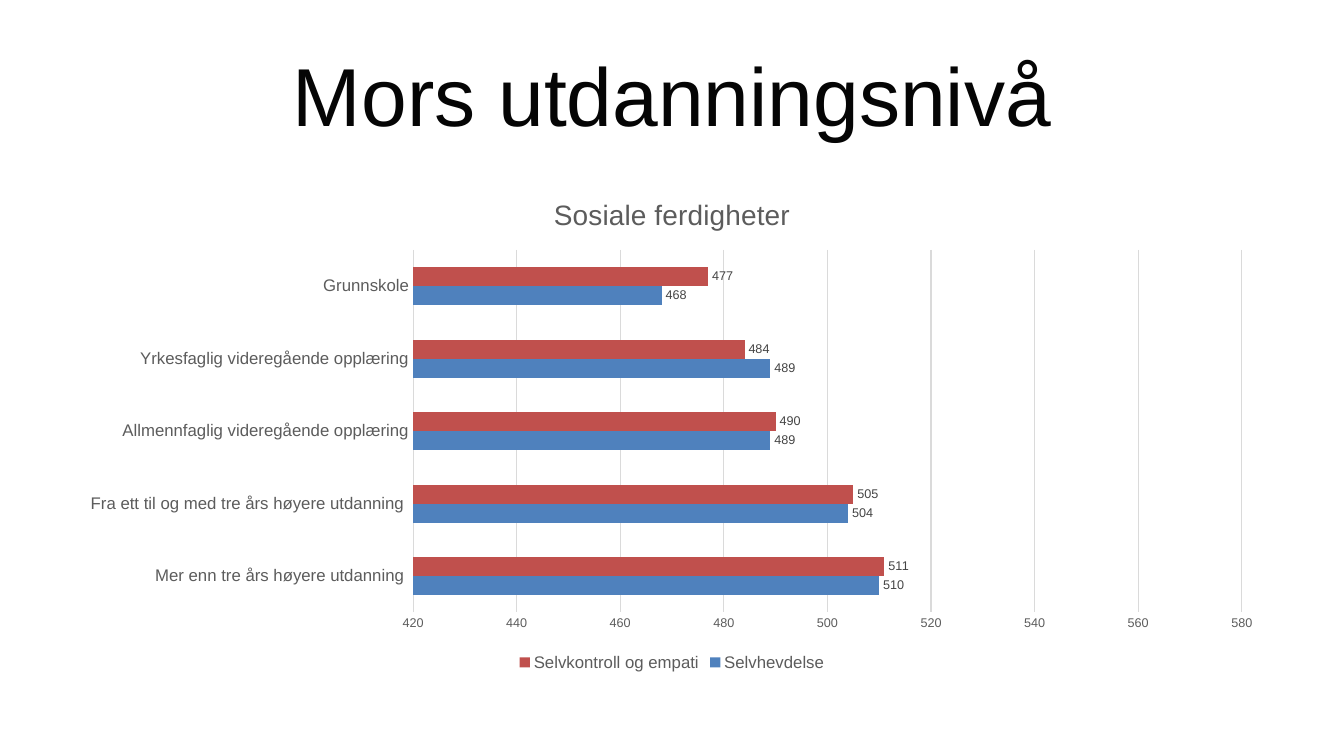
"""Builds a slide with a bar chart of social skills by mother's education."""
from lxml import etree
from pptx import Presentation
from pptx import util as u
from pptx.chart import data as chart_data
from pptx.dml import color
from pptx.enum import chart as ch, text
from pptx.oxml import ns

HEADING = "Mors utdanningsnivå"
CHART_TITLE = "Sosiale ferdigheter"
LEVELS = [
    "Mer enn tre års høyere utdanning ",
    "Fra ett til og med tre års høyere utdanning ",
    "Allmennfaglig videregående opplæring",
    "Yrkesfaglig videregående opplæring",
    "Grunnskole",
]
SERIES = [
    ("Selvhevdelse", "4F81BD", (510, 504, 489, 489, 468)),
    ("Selvkontroll og empati", "C0504D", (511, 505, 490, 484, 477)),
]
PLOT_AREA = {"x": 0.286, "y": 0.147, "w": 0.685, "h": 0.727}
FONT, BLACK, GREY, DARK, PALE = "Arial", "050505", "5C5C5C", "444444", "DADADA"
WIDTH, HEIGHT, MARGIN = 33.87, 19.05, 1.69


def paint(target, value):
    target.rgb = color.RGBColor.from_string(value)


def style(font, size, value):
    font.name, font.size, font.bold = FONT, u.Pt(size), False
    paint(font.color, value)


def write(frame, words, *, size, value):
    para = frame.paragraphs[0]
    para.alignment = text.PP_ALIGN.CENTER
    span = para.add_run()
    span.text = words
    style(span.font, size, value)


def rule(line):
    line.width = u.Pt(0.75)
    paint(line.color, PALE)


def place_plot(chart):
    plot_area = chart.plots[0]._element.getparent()
    for old in plot_area.findall(ns.qn("c:layout")):
        plot_area.remove(old)
    layout = etree.Element(ns.qn("c:layout"))
    manual = etree.SubElement(layout, ns.qn("c:manualLayout"))
    settings = [("layoutTarget", "inner"), ("xMode", "edge"), ("yMode", "edge")]
    for name, value in settings + list(PLOT_AREA.items()):
        etree.SubElement(manual, ns.qn("c:" + name)).set("val", str(value))
    plot_area.insert(0, layout)


def add_bars(page):
    data = chart_data.CategoryChartData(number_format="0")
    data.categories = LEVELS
    for name, _, values in SERIES:
        data.add_series(name, values)
    chart = page.shapes.add_chart(
        ch.XL_CHART_TYPE.BAR_CLUSTERED, u.Cm(MARGIN), u.Cm(4.45),
        u.Cm(WIDTH - 2 * MARGIN), u.Cm(12.57), data).chart
    style(chart.font, 10, BLACK)
    chart.has_title = True
    write(chart.chart_title.text_frame, CHART_TITLE, size=20, value=GREY)
    chart.chart_title.include_in_layout = False
    chart.has_legend = True
    chart.legend.position = ch.XL_LEGEND_POSITION.BOTTOM
    chart.legend.include_in_layout = False
    style(chart.legend.font, 12, GREY)

    for axis, size in ((chart.category_axis, 12), (chart.value_axis, 9)):
        axis.major_tick_mark = axis.minor_tick_mark = ch.XL_TICK_MARK.NONE
        style(axis.tick_labels.font, size, GREY)
    rule(chart.category_axis.format.line)
    scale = chart.value_axis
    scale.minimum_scale, scale.maximum_scale, scale.major_unit = 420, 580, 20
    scale.format.line.fill.background()
    rule(scale.major_gridlines.format.line)

    bars = chart.plots[0]
    bars.gap_width, bars.overlap, bars.vary_by_categories = 182, 0, False
    for series, (_, fill, _) in zip(bars.series, SERIES):
        series.format.fill.solid()
        paint(series.format.fill.fore_color, fill)
        labels = series.data_labels
        labels.show_value = True
        labels.number_format, labels.number_format_is_linked = "0", False
        labels.position = ch.XL_LABEL_POSITION.OUTSIDE_END
        style(labels.font, 9, DARK)
    place_plot(chart)


def main():
    deck = Presentation()
    deck.slide_width, deck.slide_height = u.Cm(WIDTH), u.Cm(HEIGHT)
    page = deck.slides.add_slide(deck.slide_layouts[6])
    box = page.shapes.add_textbox(
        u.Cm(MARGIN), u.Cm(0.76), u.Cm(WIDTH - 2 * MARGIN), u.Cm(3.18))
    box.text_frame.word_wrap = True
    box.text_frame.vertical_anchor = text.MSO_ANCHOR.MIDDLE
    write(box.text_frame, HEADING, size=58.7, value=BLACK)
    add_bars(page)
    deck.save("out.pptx")


if __name__ == "__main__":
    main()
